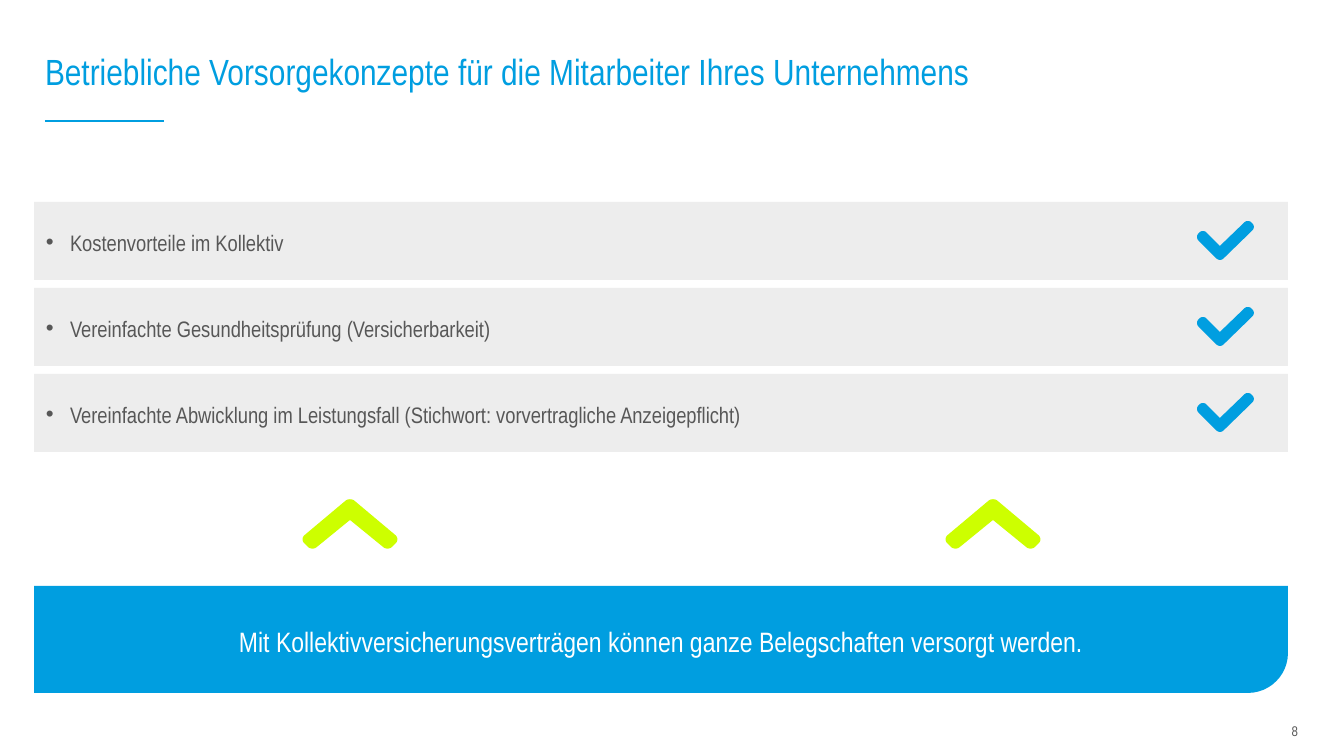
from lxml import etree
from pptx import Presentation, util as u
from pptx.dml.color import RGBColor
from pptx.enum import shapes, text
from pptx.oxml.ns import qn

# Content
TITLE = "Betriebliche Vorsorgekonzepte für die Mitarbeiter Ihres Unternehmens"
POINTS = [
    "Kostenvorteile im Kollektiv",
    "Vereinfachte Gesundheitsprüfung (Versicherbarkeit)",
    "Vereinfachte Abwicklung im Leistungsfall (Stichwort: vorvertragliche Anzeigepflicht)",
]
CLAIM = "Mit Kollektivversicherungsverträgen können ganze Belegschaften versorgt werden."
PAGE = "8"

# Style
FONT = "Arial Narrow"
BLUE = RGBColor(0x00, 0x9E, 0xE0)
LIME = RGBColor(0xCD, 0xFF, 0x00)
PALE = RGBColor(0xED, 0xED, 0xED)
GREY = RGBColor(0x57, 0x57, 0x57)
WHITE = RGBColor(0xFF, 0xFF, 0xFF)

# Layout in px
SCALE = 914400 / 100.8
LEFT, RIGHT = 34, 1288
BAR_TOP, BAR_H, STEP = 202, 78, 86
CHECK = [(1195, 35), (1203, 27), (1220, 44), (1248, 17),
         (1256, 25), (1220, 60)]  # y from the top of its bar
ARROW = [(0, 497), (50, 539), (38, 551), (0, 520), (-38, 551), (-50, 539)]
ARROW_CUT = [6, 6, 6, 0, 6, 6]
ARROW_X = [350, 993]
BANNER = [(LEFT, 586), (RIGHT, 586), (RIGHT, 693), (LEFT, 693)]


def px(n):
    return u.Emu(round(n * SCALE))


def paint(shape, color):
    shape.fill.solid()
    shape.fill.fore_color.rgb = color
    shape.line.fill.background()
    shape.shadow.inherit = False


def write(shape, words, size, color, align, pads=(0, 0, 0, 0), space=1.1):
    frame = shape.text_frame
    frame.text = words
    frame.word_wrap = True
    frame.auto_size = text.MSO_AUTO_SIZE.NONE
    frame.vertical_anchor = text.MSO_ANCHOR.MIDDLE
    (frame.margin_left, frame.margin_top,
     frame.margin_right, frame.margin_bottom) = map(px, pads)
    para = frame.paragraphs[0]
    para.alignment = align
    para.line_spacing = space
    para.space_before = u.Pt(0)
    font = para.runs[0].font
    font.name, font.size, font.color.rgb = FONT, u.Pt(size), color
    return para


def bullet(para, indent):
    props = para._p.get_or_add_pPr()
    props.set("marL", str(px(indent)))
    props.set("indent", str(-px(indent)))
    tint = etree.SubElement(props, qn("a:buClr"))
    etree.SubElement(tint, qn("a:srgbClr"), val=str(GREY))
    etree.SubElement(props, qn("a:buFont"), typeface="Arial")
    etree.SubElement(props, qn("a:buChar"), char="•")


def toward(a, b, dist):
    span = ((b[0] - a[0]) ** 2 + (b[1] - a[1]) ** 2) ** 0.5
    return [p + (q - p) * dist / span for p, q in zip(a, b)]


def outline(corners, cuts):
    """Polygon whose corners are rounded by the given cuts."""
    dots = []
    for i, (spot, cut) in enumerate(zip(corners, cuts)):
        if not cut:
            dots.append(spot)
            continue
        last, after = corners[i - 1], corners[(i + 1) % len(corners)]
        ctrl = [toward(spot, last, cut), toward(spot, last, cut * 0.45),
                toward(spot, after, cut * 0.45), toward(spot, after, cut)]
        for k in range(13):
            t = k / 12
            part = [(1 - t) ** 3, 3 * t * (1 - t) ** 2, 3 * t * t * (1 - t), t ** 3]
            dots.append([sum(w * c[d] for w, c in zip(part, ctrl)) for d in (0, 1)])
    return [(px(x), px(y)) for x, y in dots]


def blob(corners, cuts, color):
    dots = outline(corners, cuts)
    pen = slide.shapes.build_freeform(*dots[0])
    pen.add_line_segments(dots[1:], close=True)
    shape = pen.convert_to_shape()
    paint(shape, color)
    return shape


deck = Presentation()
deck.slide_width, deck.slide_height = px(1344), px(756)
slide = deck.slides.add_slide(deck.slide_layouts[5])
LEFT_AL, MID, END = text.PP_ALIGN.LEFT, text.PP_ALIGN.CENTER, text.PP_ALIGN.RIGHT

# Title and rule
head = slide.shapes.title
head.left, head.top, head.width, head.height = map(px, (45, 36, 1088, 76))
write(head, TITLE, 26, BLUE, LEFT_AL, space=0.9)
rule = slide.shapes.add_connector(
    shapes.MSO_CONNECTOR.STRAIGHT, px(45), px(121), px(164), px(121))
rule.line.color.rgb = BLUE
rule.line.width = u.Pt(1.5)
etree.SubElement(rule._element.spPr, qn("a:effectLst"))

# Bars with check marks
for i, point in enumerate(POINTS):
    top = BAR_TOP + i * STEP
    bar = slide.shapes.add_shape(
        shapes.MSO_SHAPE.RECTANGLE, px(LEFT), px(top), px(RIGHT - LEFT), px(BAR_H))
    paint(bar, PALE)
    bullet(write(bar, point, 16, GREY, LEFT_AL, (12, 8, 95, 8)), 24)
    blob([(x, top + y) for x, y in CHECK], [5, 5, 0, 5, 5, 5], BLUE)

# Upward arrows
for mid in ARROW_X:
    blob([(mid + x, y) for x, y in ARROW], ARROW_CUT, LIME)

# Banner
banner = blob(BANNER, [0, 0, 40, 0], BLUE)
write(banner, CLAIM, 20, WHITE, MID, (12, 8, 12, 8))

# Page number
page = slide.shapes.add_textbox(px(1261), px(724), px(37), px(12))
write(page, PAGE, 10, GREY, END)

deck.save("out.pptx")
